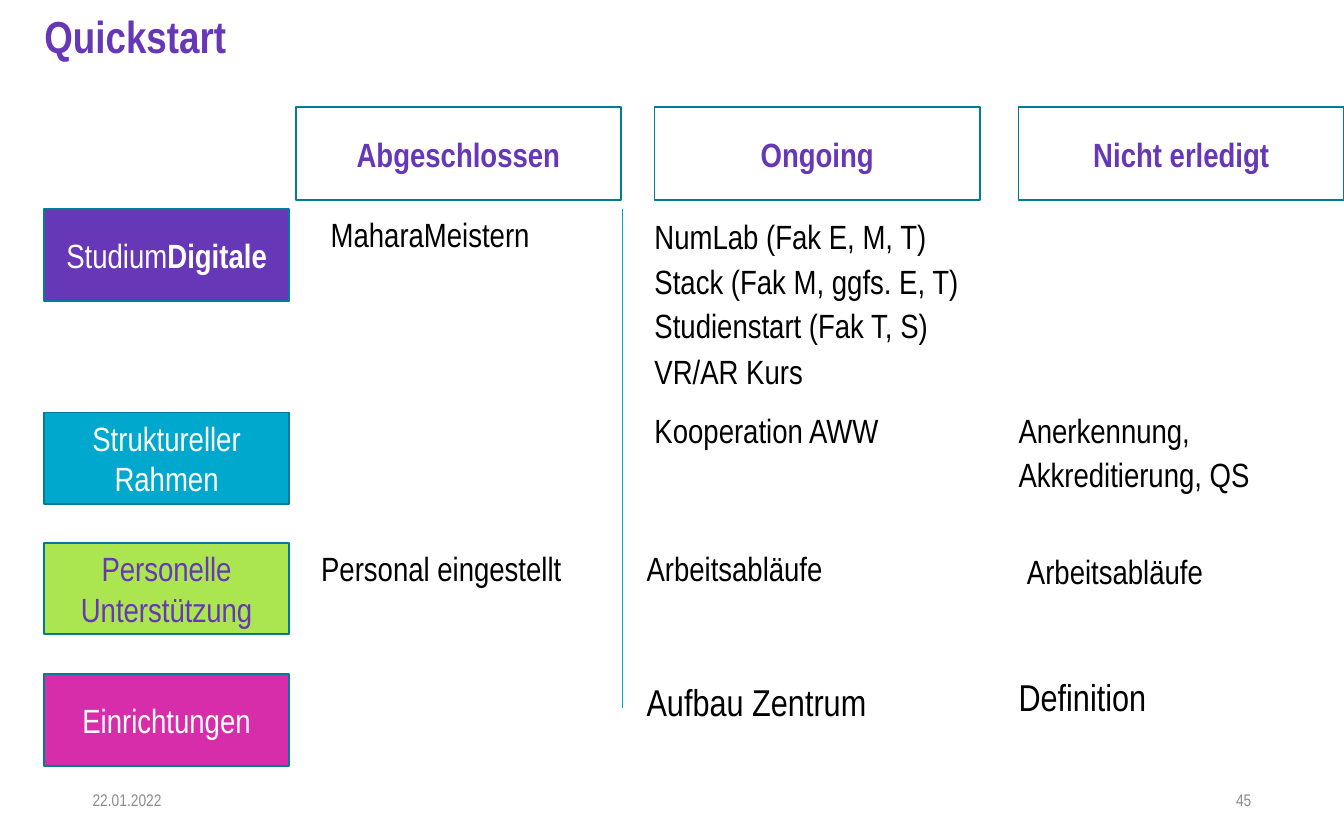
from pptx import Presentation
from pptx.dml.color import RGBColor
from pptx.enum.shapes import MSO_CONNECTOR, MSO_SHAPE
from pptx.enum.text import MSO_ANCHOR, PP_ALIGN
from pptx.oxml.ns import qn
from pptx.util import Cm, Pt

RECT = MSO_SHAPE.RECTANGLE
LINE = MSO_CONNECTOR.STRAIGHT
TOP, MIDDLE = MSO_ANCHOR.TOP, MSO_ANCHOR.MIDDLE
LEFT, CENTER, RIGHT = PP_ALIGN.LEFT, PP_ALIGN.CENTER, PP_ALIGN.RIGHT

FONT = "Arial Narrow"
BLACK = RGBColor(0x00, 0x00, 0x00)
WHITE = RGBColor(0xFF, 0xFF, 0xFF)
GRAY = RGBColor(0x8C, 0x8C, 0x8C)
TITLE = RGBColor(0x66, 0x38, 0xB6)
PURPLE = RGBColor(0x66, 0x37, 0xB6)
TEAL = RGBColor(0x00, 0x7C, 0x98)
CYAN = RGBColor(0x00, 0xA8, 0xCE)
LIME = RGBColor(0xAB, 0xE6, 0x50)
PINK = RGBColor(0xD8, 0x2D, 0xAB)

EDGE = 0.84
HEADS = [(5.59, "Abgeschlossen"), (12.37, "Ongoing"), (19.25, "Nicht erledigt")]
ROWS = [
    (3.96, "Studium", PURPLE, WHITE),
    (7.8, "Struktureller Rahmen", CYAN, WHITE),
    (10.26, "Personelle Unterstützung", LIME, PURPLE),
    (12.75, "Einrichtungen", PINK, WHITE),
]
NOTES = [
    (6.25, 3.96, "MaharaMeistern", 18),
    (12.37, 4.01, "NumLab (Fak E, M, T)\nStack (Fak M, ggfs. E, T)\n"
                  "Studienstart (Fak T, S)", 18),
    (12.37, 6.55, "VR/AR Kurs", 18),
    (12.37, 7.67, "Kooperation AWW", 18),
    (19.25, 7.67, "Anerkennung, Akkreditierung, QS", 18),
    (6.07, 10.29, "Personal eingestellt", 18),
    (12.22, 10.29, "Arbeitsabläufe", 18),
    (19.41, 10.34, "Arbeitsabläufe", 18),
    (12.22, 12.75, "Aufbau Zentrum", 20),
    (19.25, 12.67, "Definition", 20),
]


def add_run(para, text, size=18, color=BLACK, bold=False):
    run = para.add_run()
    run.text = text
    font = run.font
    font.name, font.size, font.bold = FONT, Pt(size), bold
    font.color.rgb = color


def write(frame, text, align=LEFT, anchor=TOP, space=1.0, **style):
    frame.word_wrap = True
    frame.vertical_anchor = anchor
    for i, line in enumerate(text.split("\n")):
        para = frame.add_paragraph() if i else frame.paragraphs[0]
        para.alignment = align
        para.line_spacing = space
        add_run(para, line, **style)


def add_text(slide, x, y, w, h, text, **style):
    frame = slide.shapes.add_textbox(Cm(x), Cm(y), Cm(w), Cm(h)).text_frame
    frame.margin_left = frame.margin_right = 0
    frame.margin_top = frame.margin_bottom = 0
    write(frame, text, **style)


def add_card(slide, x, y, w, h, text, fill, **style):
    card = slide.shapes.add_shape(RECT, Cm(x), Cm(y), Cm(w), Cm(h))
    card.shadow.inherit = False
    card.fill.solid()
    card.fill.fore_color.rgb = fill
    card.line.color.rgb = TEAL
    card.line.width = Pt(1)
    write(card.text_frame, text, align=CENTER, anchor=MIDDLE, **style)
    return card


def add_rule(slide, x, top, end):
    rule = slide.shapes.add_connector(LINE, Cm(x), Cm(top), Cm(x), Cm(end))
    rule.line.color.rgb = CYAN
    rule.line.width = Pt(0.5)
    props = rule.element.spPr
    props.append(props.makeelement(qn("a:effectLst"), {}))


def main():
    deck = Presentation()
    deck.slide_width, deck.slide_height = Cm(25.4), Cm(15.88)
    slide = deck.slides.add_slide(deck.slide_layouts[6])

    add_text(slide, EDGE, 0.28, 21.9, 0.81, "Quickstart",
             size=24, color=TITLE, bold=True, space=0.9)
    for x, text, align in [(1.75, "22.01.2022", LEFT), (21.82, "45", RIGHT)]:
        add_text(slide, x, 14.71, 1.83, 0.84, text,
                 size=9, color=GRAY, align=align, anchor=MIDDLE)

    cards = [add_card(slide, EDGE, y, 4.62, 1.73, text, fill, color=color)
             for y, text, fill, color in ROWS]
    add_run(cards[0].text_frame.paragraphs[0], "Digitale",
            color=WHITE, bold=True)

    add_rule(slide, 11.77, 3.96, 13.39)
    for x, text in HEADS:
        add_card(slide, x, 2.03, 6.15, 1.75, text, WHITE,
                 color=PURPLE, bold=True)
    for x, y, text, size in NOTES:
        rows = text.count("\n") + 1
        add_text(slide, x, y, 5.8, 0.9 * rows, text, size=size, space=1.1)

    deck.save("out.pptx")


if __name__ == "__main__":
    main()
